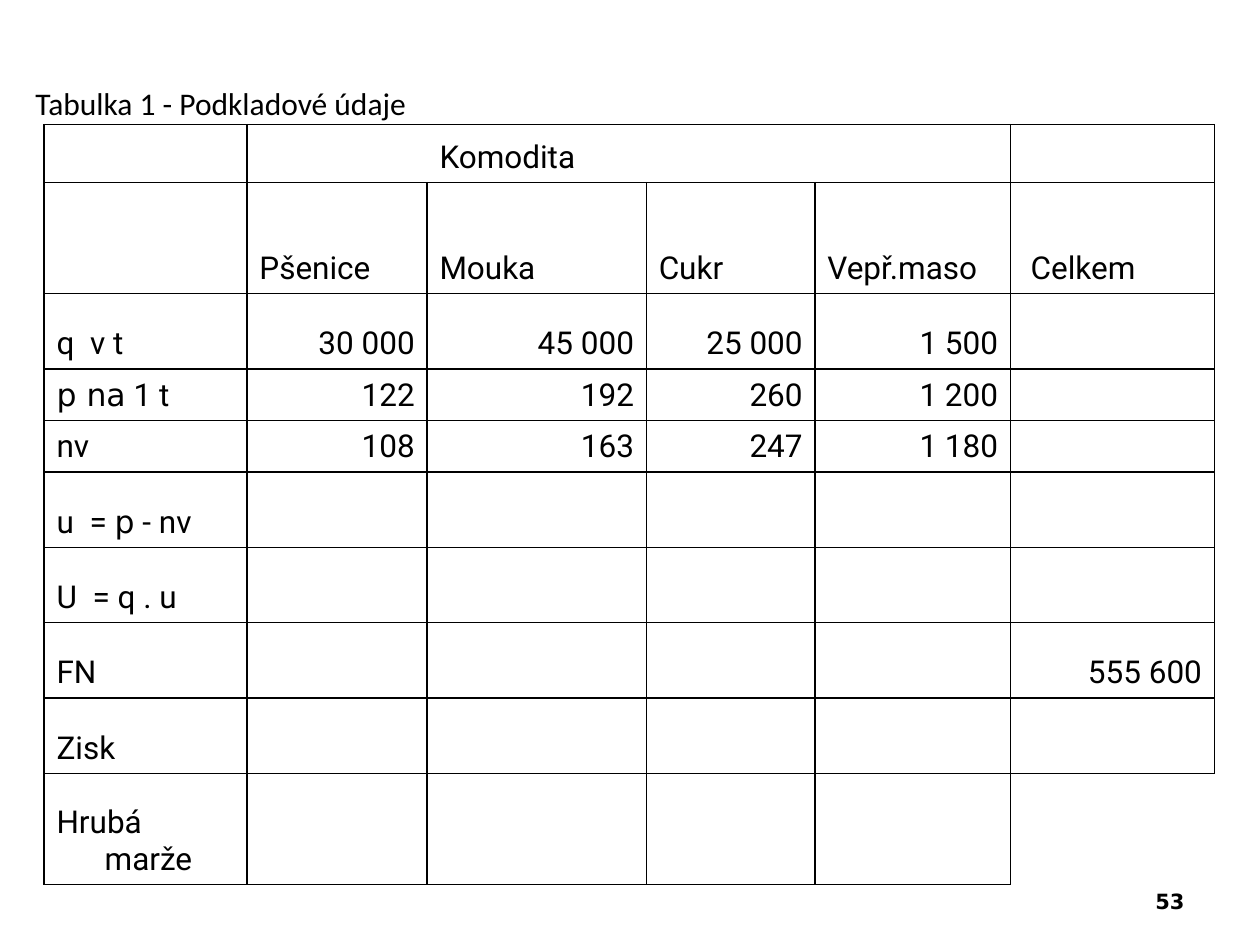
from lxml.etree import SubElement
from pptx import Presentation
from pptx.dml.color import RGBColor
from pptx.enum.text import MSO_ANCHOR, PP_ALIGN
from pptx.oxml.ns import qn
from pptx.util import Cm, Pt

BLACK = "000000"


def add_run(p, text, font="Roboto", size=18, color=BLACK, bold=False):
    r = p.add_run()
    r.text = text
    r.font.name, r.font.size, r.font.bold = font, Pt(size), bold
    r.font.color.rgb = RGBColor.from_string(color)


def hang(p):
    pPr = p._p.get_or_add_pPr()
    pPr.set("marL", str(Cm(0.97)))
    pPr.set("indent", str(-Cm(0.97)))
    return pPr


prs = Presentation()
prs.slide_width, prs.slide_height = Cm(25.4), Cm(19.05)
s = prs.slides.add_slide(prs.slide_layouts[1])
title = s.shapes.title._element
title.getparent().remove(title)

caption = s.placeholders[1]
caption.left, caption.top = Cm(0.46), Cm(1.65)
caption.width, caption.height = Cm(24.03), Cm(2.69)
p = caption.text_frame.paragraphs[0]
SubElement(hang(p), qn("a:buNone"))
p.line_spacing = 0.9
p.space_before = Pt(0)
add_run(p, "Tabulka 1 - Podkladové údaje", "Calibri")

rows = [
    ["", "", "Komodita", "", "", ""],
    ["", "Pšenice", "Mouka", "Cukr", "Vepř.maso", " Celkem"],
    ["q  v t", "30 000", "45 000", "25 000", "1 500", ""],
    [[("p na", "DejaVu Sans"), (" 1 t", "Roboto")], "122", "192", "260", "1 200", ""],
    ["nv", "108", "163", "247", "1 180", ""],
    [[("u  = ", "Roboto"), ("p", "DejaVu Sans"), (" - nv", "Roboto")], "", "", "", "", ""],
    ["U  = q . u", "", "", "", "", ""],
    ["FN", "", "", "", "", "555 600"],
    ["Zisk", "", "", "", "", ""],
    ["Hrubá marže", "", "", "", "", ""],
]
widths = [4.09, 3.63, 4.42, 3.4, 3.94, 4.11]
heights = [1.17, 2.24, 1.52, 1.02, 1.02, 1.52, 1.52, 1.52, 1.52, 2.24]

table = s.shapes.add_table(len(rows), len(widths), Cm(0.89), Cm(2.51),
                           Cm(sum(widths)), Cm(sum(heights))).table
table.first_row = table.horz_banding = False
for col, width in zip(table.columns, widths):
    col.width = Cm(width)
for row, height in zip(table.rows, heights):
    row.height = Cm(height)

for i, row in enumerate(rows):
    for j, content in enumerate(row):
        cell = table.cell(i, j)
        cell.vertical_anchor = MSO_ANCHOR.BOTTOM
        cell.margin_left = cell.margin_right = Cm(0.25)
        cell.margin_top = cell.margin_bottom = Cm(0.13)
        p = cell.text_frame.paragraphs[0]
        hang(p)
        if i > 1 and j > 0:
            p.alignment = PP_ALIGN.RIGHT
        if content:
            parts = [(content, "Roboto")] if isinstance(content, str) else content
            for text, font in parts:
                add_run(p, text, font)

        hidden = set()
        if i == 0 and 2 <= j <= 4:
            hidden.add("L")
        if i == 0 and 1 <= j <= 3:
            hidden.add("R")
        if (i, j) == (len(rows) - 1, len(widths) - 1):
            hidden.update("RB")
        tcPr = cell._tc.get_or_add_tcPr()
        for side in "LRTB":
            ln = SubElement(tcPr, qn("a:ln" + side), w=str(Pt(1)))
            if side in hidden:
                SubElement(ln, qn("a:noFill"))
            else:
                fill = SubElement(ln, qn("a:solidFill"))
                SubElement(fill, qn("a:srgbClr"), val=BLACK)
        cell.fill.background()

number = s.shapes.add_textbox(Cm(18.21), Cm(17.65), Cm(5.92), Cm(1.02))
tf = number.text_frame
tf.word_wrap = True
tf.vertical_anchor = MSO_ANCHOR.MIDDLE
p = tf.paragraphs[0]
p.alignment = PP_ALIGN.RIGHT
add_run(p, "53", "DejaVu Sans", 12, bold=True)

prs.save("out.pptx")
